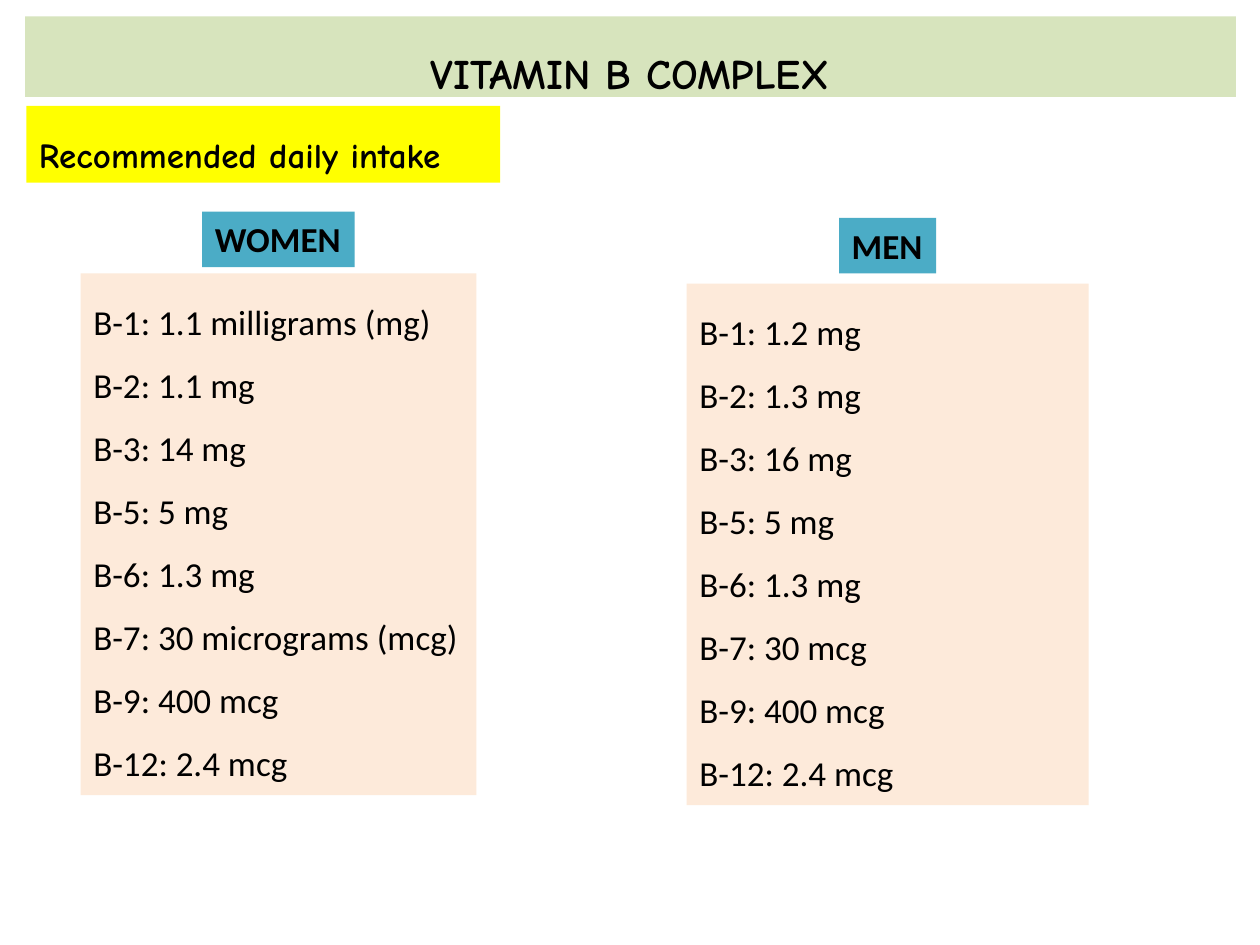
import pptx
import pptx.util
import pptx.dml.color
import pptx.enum.text
import lxml.etree

Inches = pptx.util.Inches
Color = pptx.dml.color.RGBColor
Align = pptx.enum.text.PP_ALIGN

BLACK = Color(0x00, 0x00, 0x00)
GREEN = Color(0xD7, 0xE4, 0xBD)
YELLOW = Color(0xFF, 0xFF, 0x00)
TEAL = Color(0x4B, 0xAC, 0xC6)
PEACH = Color(0xFD, 0xEA, 0xDA)
COMIC = "Comic Neue"
PLAIN = "Calibri"

WOMEN = [
    "B-1: 1.1 milligrams (mg)", "B-2: 1.1 mg", "B-3: 14 mg", "B-5: 5 mg",
    "B-6: 1.3 mg", "B-7: 30 micrograms (mcg)", "B-9: 400 mcg", "B-12: 2.4 mcg",
]
MEN = [
    "B-1: 1.2 mg", "B-2: 1.3 mg", "B-3: 16 mg", "B-5: 5 mg",
    "B-6: 1.3 mg", "B-7: 30 mcg", "B-9: 400 mcg", "B-12: 2.4 mcg",
]


def place(shape, box, fill):
    shape.left, shape.top, shape.width, shape.height = map(Inches, box)
    shape.fill.solid()
    shape.fill.fore_color.rgb = fill


def write(shape, lines, font=PLAIN, size=20, bold=False, space=1.5,
          align=Align.LEFT):
    frame = shape.text_frame
    frame.word_wrap = True
    frame.auto_size = pptx.enum.text.MSO_AUTO_SIZE.NONE
    frame.vertical_anchor = pptx.enum.text.MSO_ANCHOR.TOP
    for num, line in enumerate(lines):
        para = frame.add_paragraph() if num else frame.paragraphs[0]
        para.alignment = align
        para.line_spacing = space
        para.space_before = pptx.util.Pt(0)
        props = para._p.get_or_add_pPr()
        props.set("marL", "0")
        props.set("indent", "0")
        lxml.etree.SubElement(props, pptx.oxml.ns.qn("a:buNone"))
        run = para.add_run()
        run.text = line
        run.font.name = font
        run.font.size = pptx.util.Pt(size)
        run.font.bold = bold
        run.font.color.rgb = BLACK


def add_title(slide, box):
    title = slide.shapes.title
    place(title, box, GREEN)
    write(title, ["VITAMIN B COMPLEX"], COMIC, 24, True, align=Align.CENTER)


def add_label(slide, box):
    label = slide.shapes.add_textbox(*map(Inches, box))
    place(label, box, YELLOW)
    write(label, ["Recommended daily intake"], COMIC, bold=True)


def add_group(head, body, name, doses, box, tag):
    left, top, width, height = box
    wide, gap = tag
    tall = 0.44
    place(head, (left + (width - wide) / 2, top, wide, tall), TEAL)
    write(head, [name], bold=True, space=1.0)
    head.text_frame.margin_right = Inches(0)
    drop = tall + gap
    place(body, (left, top + drop, width, height - drop), PEACH)
    write(body, doses)


def main():
    deck = pptx.Presentation()
    deck.slide_width = Inches(10)
    deck.slide_height = Inches(7.5)
    slide = deck.slides.add_slide(deck.slide_layouts[4])
    add_title(slide, (0.2, 0.13, 9.61, 0.64))
    add_label(slide, (0.21, 0.84, 3.76, 0.61))
    slots = slide.placeholders
    add_group(slots[1], slots[2], "WOMEN", WOMEN,
              (0.64, 1.68, 3.14, 4.63), (1.21, 0.05))
    add_group(slots[3], slots[4], "MEN", MEN,
              (5.45, 1.73, 3.19, 4.66), (0.77, 0.08))
    deck.save("out.pptx")


if __name__ == "__main__":
    main()
